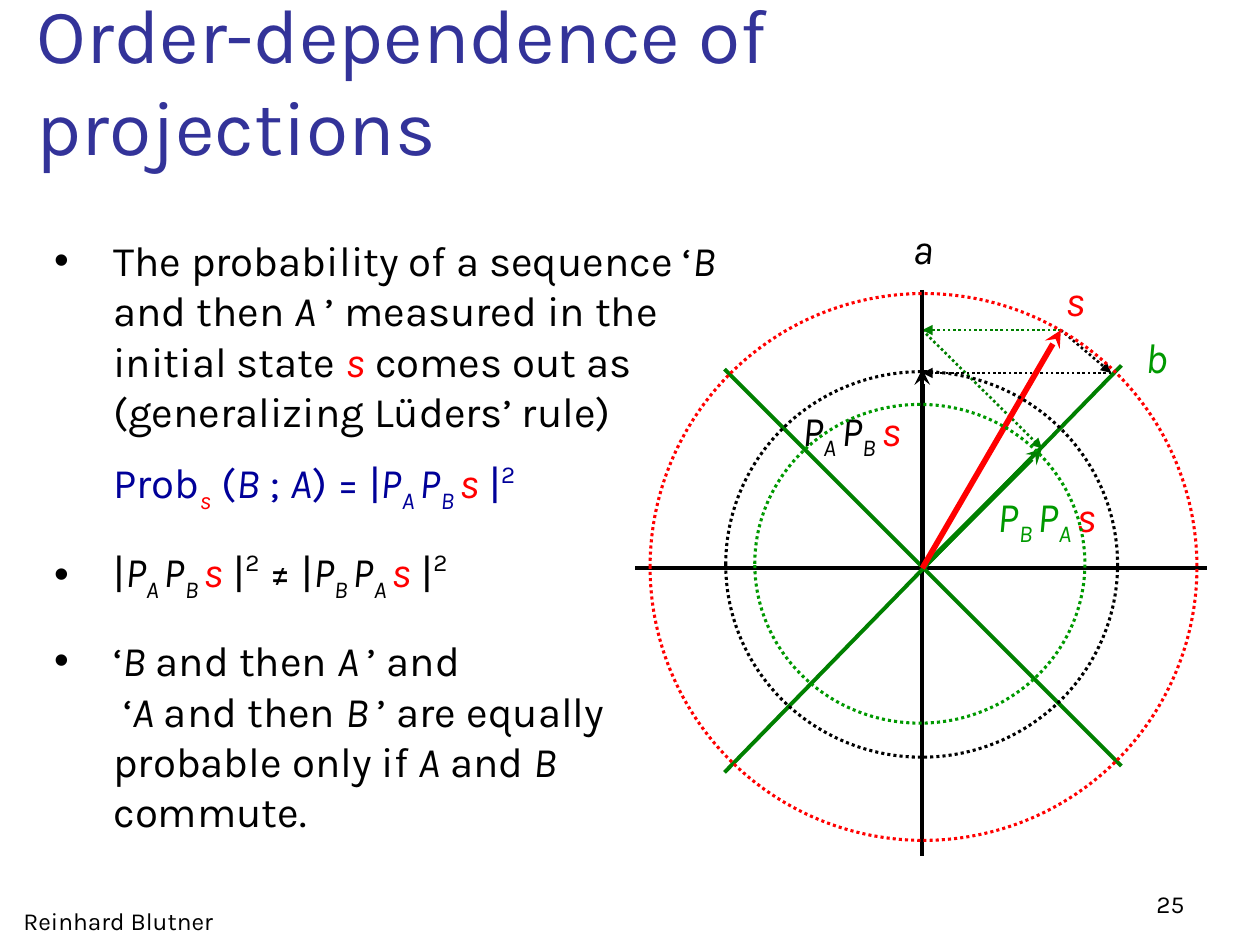
import pptx
import pptx.dml.color
import pptx.enum.dml
import pptx.enum.shapes
import pptx.enum.text
import pptx.oxml.ns
import pptx.util
from lxml import etree

Inches, Pt = pptx.util.Inches, pptx.util.Pt
ALIGN = pptx.enum.text.PP_ALIGN
ANCHOR = pptx.enum.text.MSO_ANCHOR
DOTTED = pptx.enum.dml.MSO_LINE.ROUND_DOT
FONT = "Karla"
BLACK, RED, NAVY, INDIGO = "000000", "FF0000", "000099", "333399"
GREEN, DARK_GREEN = "009900", "008000"
SUB, SUPER = -25, 38


def projected(first, second, color=BLACK):
    """Spans for the state s under two projections, outermost first."""
    return [("P", color, True), (first + " ", color, True, SUB),
            ("P", color, True), (second + " ", color, True, SUB),
            ("s", RED, True)]


def squared_norm(first, second, color=BLACK):
    return [("|", color), *projected(first, second, color),
            (" |", color), ("2", color, False, SUPER)]


def sequence(first, second):
    return [("‘",), (first, BLACK, True), (" and then ",),
            (second + " ", BLACK, True), ("’",)]


# A span is text, colour, italic, baseline.
# A paragraph is bulleted, space before, space after, spans.
TITLE = "Order-dependence of projections"
BODY = [
    (True, 6, 6, [("The probability of a sequence ",), *sequence("B", "A"),
                  (" measured in the initial state ",), ("s", RED, True),
                  (" comes out as (generalizing Lüders’ rule)",)]),
    (False, 6, 12, [("Prob", NAVY), ("s", RED, True, SUB), (" (", NAVY),
                    ("B", NAVY, True), (" ; ", NAVY), ("A", NAVY, True),
                    (") = ", NAVY), *squared_norm("A", "B", NAVY)]),
    (True, 6, 12, [*squared_norm("A", "B"), (" ≠ ",), *squared_norm("B", "A")]),
    (True, 6, 12, [*sequence("B", "A"), (" and\n ",), *sequence("A", "B"),
                   (" are equally\nprobable only if ",), ("A", BLACK, True),
                   (" and ",), ("B", BLACK, True), ("\ncommute.",)]),
]

# Left, top, width, size, alignment, first-line indent, spans
LABELS = [
    (-0.4, 7.14, 2.68, 14, ALIGN.CENTER, 0, [("Reinhard Blutner",)]),
    (7.17, 7.01, 2.33, 14, ALIGN.RIGHT, 0, [("25",)]),
    (6.85, 1.72, 0.95, 24, ALIGN.CENTER, 0, [("a", BLACK, True)]),
    (8.98, 2.58, 0.4, 24, ALIGN.CENTER, 0, [("b", GREEN, True)]),
    (7.56, 2.13, 1.45, 24, ALIGN.CENTER, 0.5, [("s", RED, True)]),
    (7.16, 3.84, 1.8, 24, ALIGN.CENTER, 0.5, projected("B", "A", GREEN)),
    (5.61, 3.16, 1.8, 24, ALIGN.CENTER, 0.5, projected("A", "B")),
]

ORIGIN = (7.32, 4.51)
STATE = (8.42, 2.62)
STATE_ON_A = (ORIGIN[0], STATE[1])
STATE_ON_B = (8.82, 2.96)
B_THEN_A = (ORIGIN[0], STATE_ON_B[1])
A_THEN_B = (8.27, 3.56)

# Start, end, colour
AXES = [
    ((ORIGIN[0], 2.3), (ORIGIN[0], 6.79), BLACK),
    ((5.04, ORIGIN[1]), (9.58, ORIGIN[1]), BLACK),
    ((5.75, 2.93), (8.9, 6.08), DARK_GREEN),
    ((8.9, 2.9), (5.75, 6.13), DARK_GREEN),
]
PROJECTIONS = [
    (STATE, STATE_ON_A, DARK_GREEN),
    (STATE, STATE_ON_B, BLACK),
    (STATE_ON_A, A_THEN_B, DARK_GREEN),
    (STATE_ON_B, B_THEN_A, BLACK),
]
VECTORS = [
    (ORIGIN, (ORIGIN[0], 2.93), BLACK, 3),
    (ORIGIN, A_THEN_B, DARK_GREEN, 3),
    (ORIGIN, STATE, RED, 3.25),
]

# Left, top, width, height, colour
CIRCLES = [
    (5.16, 2.33, 4.34, 4.34, RED),
    (5.99, 3.21, 2.62, 2.53, GREEN),
    (5.76, 2.95, 3.11, 3.06, BLACK),
]


def rgb(color):
    return pptx.dml.color.RGBColor.from_string(color)


def add_child(parent, tag, **attributes):
    return etree.SubElement(parent, pptx.oxml.ns.qn(tag), attributes)


def place(shape, left, top, width, height):
    shape.left, shape.top = Inches(left), Inches(top)
    shape.width, shape.height = Inches(width), Inches(height)


def format_run(run, size, color=BLACK, italic=False, baseline=0):
    run.font.name, run.font.size = FONT, Pt(size)
    run.font.italic = italic
    run.font.color.rgb = rgb(color)
    if baseline:
        run._r.get_or_add_rPr().set("baseline", str(baseline * 1000))


def add_spans(para, spans, size):
    for text, *style in spans:
        for number, piece in enumerate(text.split("\n")):
            if number:
                para.add_line_break()
            if piece:
                run = para.add_run()
                run.text = piece
                format_run(run, size, *style)


def set_indent(para, left, first):
    properties = para._p.get_or_add_pPr()
    properties.set("marL", str(Inches(left)))
    properties.set("indent", str(Inches(first)))
    return properties


def add_line(slide, start, end, color, width, head=None, dash=None):
    line = slide.shapes.add_connector(
        pptx.enum.shapes.MSO_CONNECTOR.STRAIGHT,
        *(Inches(value) for value in (*start, *end)))
    line.line.color.rgb = rgb(color)
    line.line.width = Pt(width)
    if dash:
        line.line.dash_style = dash
    if head:
        add_child(line.line._get_or_add_ln(), "a:tailEnd", type=head)
    add_child(line._element.spPr, "a:effectLst")


def add_title(slide):
    title = slide.shapes.title
    place(title, 0.19, 0, 9.3, 1.25)
    frame = title.text_frame
    frame.text = TITLE
    frame.auto_size = pptx.enum.text.MSO_AUTO_SIZE.NONE
    frame.vertical_anchor = ANCHOR.MIDDLE
    frame.margin_right = Inches(0.5)
    para = frame.paragraphs[0]
    para.alignment = ALIGN.LEFT
    format_run(para.runs[0], 44, INDIGO)


def add_body(slide):
    body = slide.placeholders[1]
    place(body, 0.33, 1.81, 5.59, 5.2)
    frame = body.text_frame
    frame.auto_size = pptx.enum.text.MSO_AUTO_SIZE.NONE
    frame.vertical_anchor = ANCHOR.TOP
    for number, (bulleted, before, after, spans) in enumerate(BODY):
        para = frame.add_paragraph() if number else frame.paragraphs[0]
        para.space_before, para.space_after = Pt(before), Pt(after)
        properties = set_indent(para, 0.47, -0.51 if bulleted else 0)
        if bulleted:
            add_child(properties, "a:buChar", char="•")
        else:
            add_child(properties, "a:buNone")
        add_spans(para, spans, 24)


def add_label(slide, left, top, width, size, alignment, indent, spans):
    box = slide.shapes.add_textbox(0, 0, 0, 0)
    place(box, left, top, width, 0.5 if size == 24 else 0.36)
    frame = box.text_frame
    frame.word_wrap = True
    para = frame.paragraphs[0]
    para.alignment = alignment
    set_indent(para, 0, indent)
    add_spans(para, spans, size)


def add_circle(slide, left, top, width, height, color):
    circle = slide.shapes.add_shape(pptx.enum.shapes.MSO_SHAPE.OVAL, 0, 0, 0, 0)
    place(circle, left, top, width, height)
    circle.shadow.inherit = False
    circle.fill.background()
    circle.line.color.rgb = rgb(color)
    circle.line.width = Pt(1.75)
    circle.line.dash_style = DOTTED


def main():
    deck = pptx.Presentation()
    deck.slide_width, deck.slide_height = Inches(10), Inches(7.5)
    slide = deck.slides.add_slide(deck.slide_layouts[1])
    add_title(slide)
    add_body(slide)
    for projection in PROJECTIONS:
        add_line(slide, *projection, 1.5, "triangle", DOTTED)
    for axis in AXES:
        add_line(slide, *axis, 2.25)
    for label in LABELS:
        add_label(slide, *label)
    for vector in VECTORS:
        add_line(slide, *vector, "stealth")
    for circle in CIRCLES:
        add_circle(slide, *circle)
    deck.save("out.pptx")


if __name__ == "__main__":
    main()
